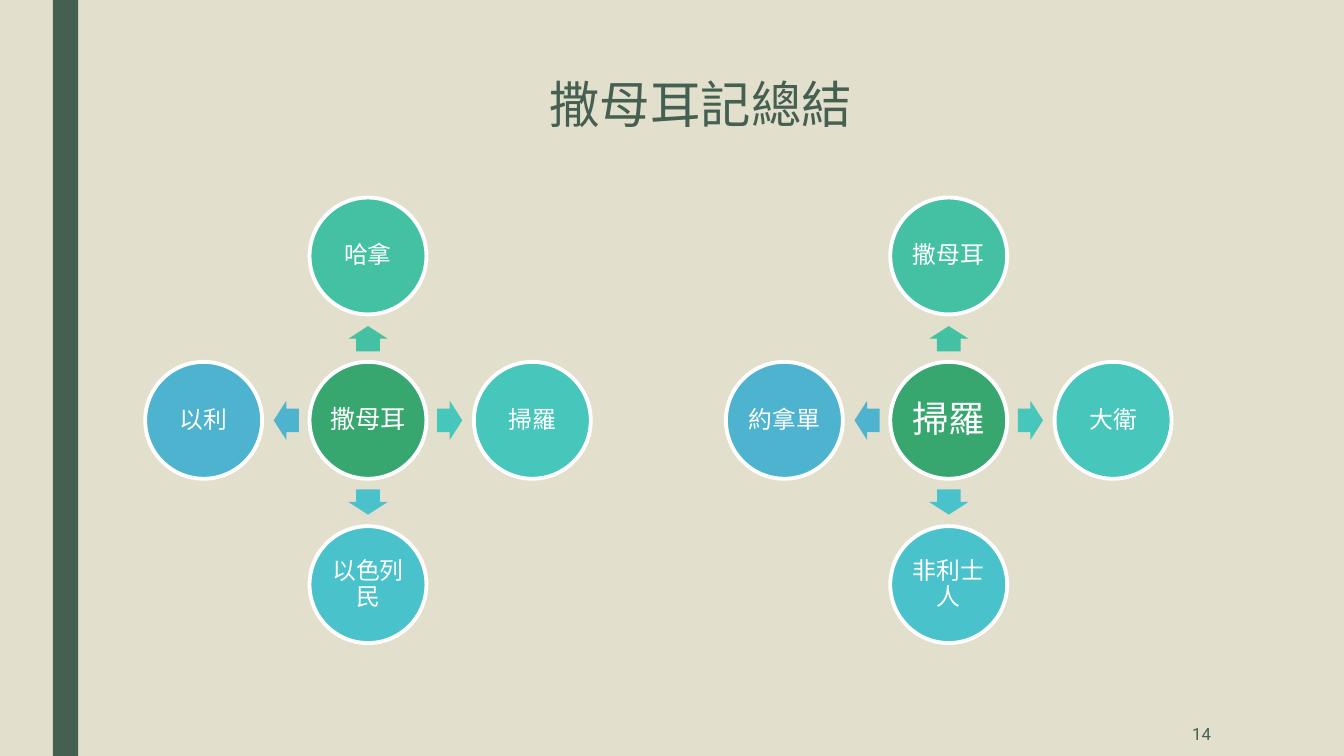
from dataclasses import dataclass

from pptx import Presentation
from pptx import util as u
from pptx.dml.color import RGBColor
from pptx.enum import shapes, text

PX = 9144  # one hundredth of an inch
FONT = "Roboto"
HEX = {
    "sand": "E2DFCC", "pine": "455F51", "white": "FFFFFF", "hub": "37A76F",
    "up": "44C1A3", "right": "47C6BB", "down": "4AC2CB", "left": "4EB3CF",
}
MID = 417
DISC = 116
REACH = 163
GAP = 81
ARROW = (25, 39)


@dataclass
class Way:
    hue: str
    dx: int
    dy: int
    turn: int


@dataclass
class Wheel:
    x: int
    hub: str
    size: int
    names: tuple[str, ...]


WAYS = (
    Way("up", 0, -1, 270),
    Way("right", 1, 0, 0),
    Way("down", 0, 1, 90),
    Way("left", -1, 0, 180),
)
WHEELS = (
    Wheel(365, "撒母耳", 18, ("哈拿", "掃羅", "以色列民", "以利")),
    Wheel(941, "掃羅", 26, ("撒母耳", "大衛", "非利士人", "約拿單")),
)


def rgb(hue: str) -> RGBColor:
    return RGBColor.from_string(HEX[hue])


def write(frame, words: str, size: int, hue: str, align, anchor, space: float = 1.0) -> None:
    frame.word_wrap = True
    frame.auto_size = text.MSO_AUTO_SIZE.NONE
    frame.vertical_anchor = anchor
    para = frame.paragraphs[0]
    para.alignment = align
    para.line_spacing = space
    run = para.add_run()
    run.text = words
    run.font.name = FONT
    run.font.size = u.Pt(size)
    run.font.color.rgb = rgb(hue)


def draw(slide, kind, x: int, y: int, w: int, h: int, hue: str):
    """Add a plain filled shape centred on x, y."""
    shape = slide.shapes.add_shape(
        kind, x * PX - w * PX // 2, y * PX - h * PX // 2, w * PX, h * PX)
    shape.shadow.inherit = False
    shape.fill.solid()
    shape.fill.fore_color.rgb = rgb(hue)
    shape.line.fill.background()
    return shape


def disc(slide, x: int, y: int, hue: str, words: str, size: int) -> None:
    shape = draw(slide, shapes.MSO_SHAPE.OVAL, x, y, DISC, DISC, hue)
    shape.line.color.rgb = rgb("white")
    shape.line.width = u.Pt(2.75)
    frame = shape.text_frame
    frame.margin_left = frame.margin_right = 2 * PX
    frame.margin_top = frame.margin_bottom = 2 * PX
    write(frame, words, size, "white", text.PP_ALIGN.CENTER,
          text.MSO_ANCHOR.MIDDLE, 0.9)


def arrow(slide, x: int, y: int, way: Way) -> None:
    shape = draw(slide, shapes.MSO_SHAPE.RIGHT_ARROW, x, y, *ARROW, way.hue)
    shape.adjustments[0] = 0.6
    shape.adjustments[1] = 0.5
    shape.rotation = way.turn


def spin(slide, wheel: Wheel) -> None:
    """Draw a hub with an arrow and a disc in each direction."""
    disc(slide, wheel.x, MID, "hub", wheel.hub, wheel.size)
    for way, name in zip(WAYS, wheel.names):
        arrow(slide, wheel.x + way.dx * GAP, MID + way.dy * GAP, way)
        disc(slide, wheel.x + way.dx * REACH, MID + way.dy * REACH,
             way.hue, name, 17)


def main() -> None:
    deck = Presentation()
    deck.slide_width = 1333 * PX
    deck.slide_height = 750 * PX
    slide = deck.slides.add_slide(deck.slide_layouts[5])
    slide.background.fill.solid()
    slide.background.fill.fore_color.rgb = rgb("sand")

    draw(slide, shapes.MSO_SHAPE.RECTANGLE, 65, 375, 25, 750, "pine")

    title = slide.shapes.title
    title.left, title.top = 136 * PX, 75 * PX
    title.width, title.height = 1118 * PX, 104 * PX
    write(title.text_frame, "撒母耳記總結", 36, "pine",
          text.PP_ALIGN.CENTER, text.MSO_ANCHOR.TOP, 0.89)

    page = slide.shapes.add_textbox(1036 * PX, 706 * PX, 175 * PX, 44 * PX)
    write(page.text_frame, "14", 12, "pine",
          text.PP_ALIGN.RIGHT, text.MSO_ANCHOR.MIDDLE)

    for wheel in WHEELS:
        spin(slide, wheel)
    deck.save("out.pptx")


if __name__ == "__main__":
    main()
